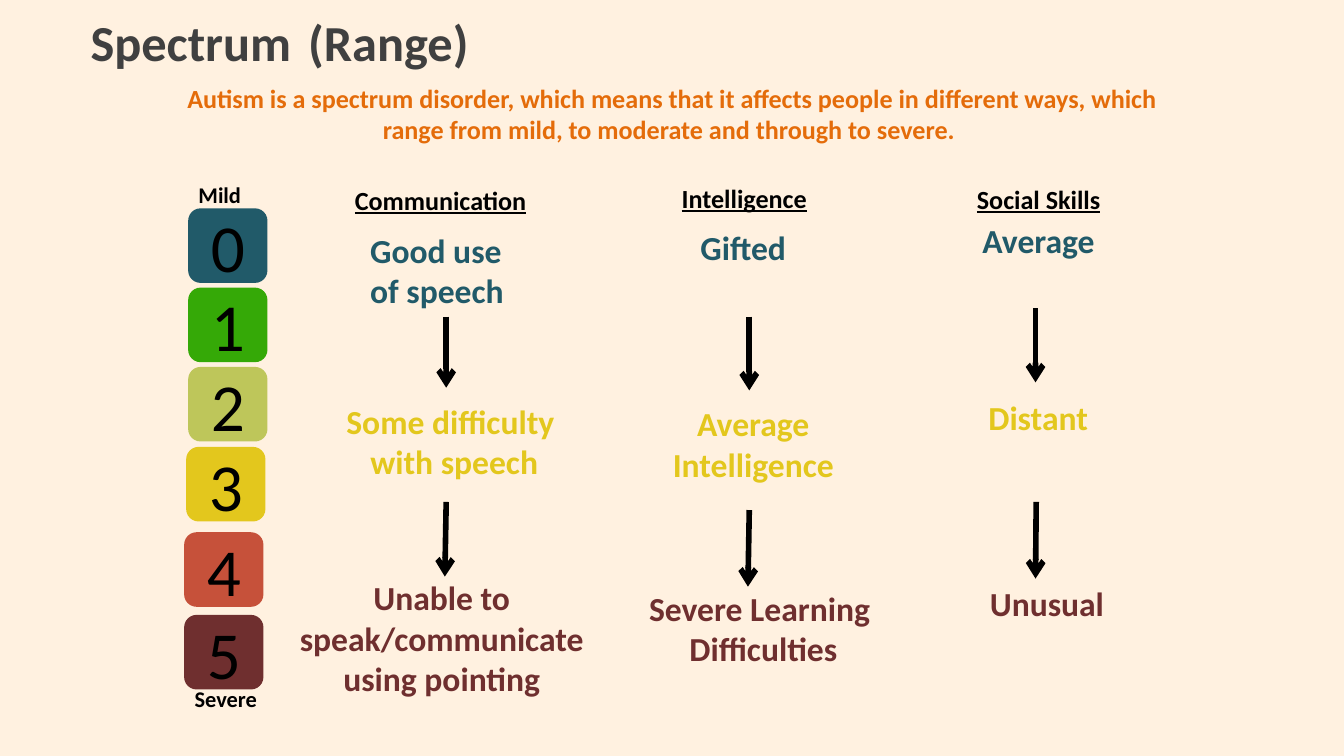
from lxml import etree
from pptx import Presentation
from pptx.dml.color import RGBColor
from pptx.enum.shapes import MSO_CONNECTOR, MSO_SHAPE
from pptx.enum.text import MSO_ANCHOR, MSO_AUTO_SIZE, PP_ALIGN
from pptx.oxml.ns import qn
from pptx.util import Inches, Pt

LEFT, CENTER = PP_ALIGN.LEFT, PP_ALIGN.CENTER
MIDDLE = MSO_ANCHOR.MIDDLE
GROW = MSO_AUTO_SIZE.SHAPE_TO_FIT_TEXT
STRAIGHT = MSO_CONNECTOR.STRAIGHT
ROUNDED = MSO_SHAPE.ROUNDED_RECTANGLE

FONT = "Calibri"
BLACK, MILD, MODERATE, SEVERE = "000000", "215A69", "E3C71D", "6F2F2F"

# Scale tiles: left, top, fill; the number is the position in the list
TILES = [
    (2.8, 3.1, MILD),
    (2.8, 4.28, "35A907"),
    (2.8, 5.46, "BEC65A"),
    (2.77, 6.65, MODERATE),
    (2.74, 7.92, "C6513A"),
    (2.74, 9.15, SEVERE),
]

# Each area: heading, then mild, moderate and severe texts, then arrows
AREAS = [
    {
        "heading": ("Communication", (4.19, 2.69, 4.73, 0.57)),
        "levels": [
            ("Good use\nof speech", (5.41, 3.37, 2.45, 1.92), LEFT),
            ("Some difficulty \nwith speech", (4.93, 5.91, 3.66, 1.92), CENTER),
            ("Unable to speak/communicate using pointing",
             (4.21, 8.54, 4.73, 1.92), CENTER),
        ],
        "arrows": [(6.64, 4.71, 6.64, 5.77), (6.64, 7.47, 6.62, 8.58)],
    },
    {
        "heading": ("Intelligence", (9.31, 2.66, 3.53, 0.57)),
        "levels": [
            ("Gifted", (10.26, 3.33, 1.6, 0.71), CENTER),
            ("Average\nIntelligence", (9.85, 5.95, 2.72, 1.36), CENTER),
            ("Severe Learning \nDifficulties", (9.49, 8.7, 3.74, 1.36), CENTER),
        ],
        "arrows": [(11.15, 4.71, 11.15, 5.81), (11.15, 7.59, 11.13, 8.73)],
    },
    {
        "heading": ("Social Skills", (13.71, 2.68, 3.49, 0.57)),
        "levels": [
            ("Average", (14.46, 3.22, 1.99, 0.71), CENTER),
            ("Distant", (14.55, 5.85, 1.8, 0.71), CENTER),
            ("Unusual", (14.57, 8.63, 2.02, 0.71), CENTER),
        ],
        "arrows": [(15.41, 4.59, 15.41, 5.69), (15.42, 7.47, 15.41, 8.61)],
    },
]


def paint(color_format, color):
    color_format.rgb = RGBColor.from_string(color)


def add_run(paragraph, text, size, color, **formats):
    run = paragraph.add_run()
    run.text = text
    for name, value in {"name": FONT, "size": Pt(size), **formats}.items():
        setattr(run.font, name, value)
    paint(run.font.color, color)


def add_label(slide, text, box, size, color, align=CENTER, **formats):
    frame = slide.shapes.add_textbox(*map(Inches, box)).text_frame
    frame.word_wrap = True
    frame.auto_size = GROW
    for index, line in enumerate(text.split("\n")):
        paragraph = frame.add_paragraph() if index else frame.paragraphs[0]
        paragraph.alignment = align
        add_run(paragraph, line, size, color, bold=True, **formats)
    return frame


def add_tile(slide, number, left, top, color):
    tile = slide.shapes.add_shape(ROUNDED, *map(Inches, (left, top, 1.18, 1.11)))
    tile.shadow.inherit = False
    tile.fill.solid()
    paint(tile.fill.fore_color, color)
    tile.line.fill.background()
    tile.text_frame.vertical_anchor = MIDDLE
    paragraph = tile.text_frame.paragraphs[0]
    paragraph.alignment = CENTER
    add_run(paragraph, str(number), 72, BLACK)


def add_arrow(slide, ends):
    arrow = slide.shapes.add_connector(STRAIGHT, *map(Inches, ends))
    paint(arrow.line.color, BLACK)
    arrow.line.width = Pt(6)
    etree.SubElement(arrow.line._get_or_add_ln(), qn("a:tailEnd"), type="arrow")
    etree.SubElement(arrow._element.spPr, qn("a:effectLst"))


def add_area(slide, area):
    heading, box = area["heading"]
    add_label(slide, heading, box, 28, BLACK, underline=True)
    for (text, box, align), color in zip(area["levels"], (MILD, MODERATE, SEVERE)):
        add_label(slide, text, box, 36, color, align)
    for ends in area["arrows"]:
        add_arrow(slide, ends)


def main():
    deck = Presentation()
    deck.slide_width, deck.slide_height = Inches(20), Inches(11.25)
    slide = deck.slides.add_slide(deck.slide_layouts[6])
    slide.background.fill.solid()
    paint(slide.background.fill.fore_color, "FFF1E0")

    # Title and introduction
    title = add_label(slide, "Spectrum", (1.25, -0.24, 18.5, 1.45), 54, "404040", LEFT)
    for text, size in ((" ", 80), ("(Range)", 54)):
        add_run(title.paragraphs[0], text, size, "404040", bold=True)
    add_label(
        slide,
        "Autism is a spectrum disorder, which means that it affects people in "
        "different ways, which range from mild, to moderate and through to severe. ",
        (2.51, 1.17, 14.97, 1.04), 28, "E46C0A",
    )

    # Scale from mild to severe
    for number, tile in enumerate(TILES):
        add_tile(slide, number, *tile)
    add_label(slide, "Mild", (2.8, 2.64, 0.94, 0.5), 24, BLACK)
    add_label(slide, "Severe", (2.74, 10.15, 1.24, 0.5), 24, BLACK)

    # Areas affected
    for area in AREAS:
        add_area(slide, area)

    deck.save("out.pptx")


if __name__ == "__main__":
    main()
